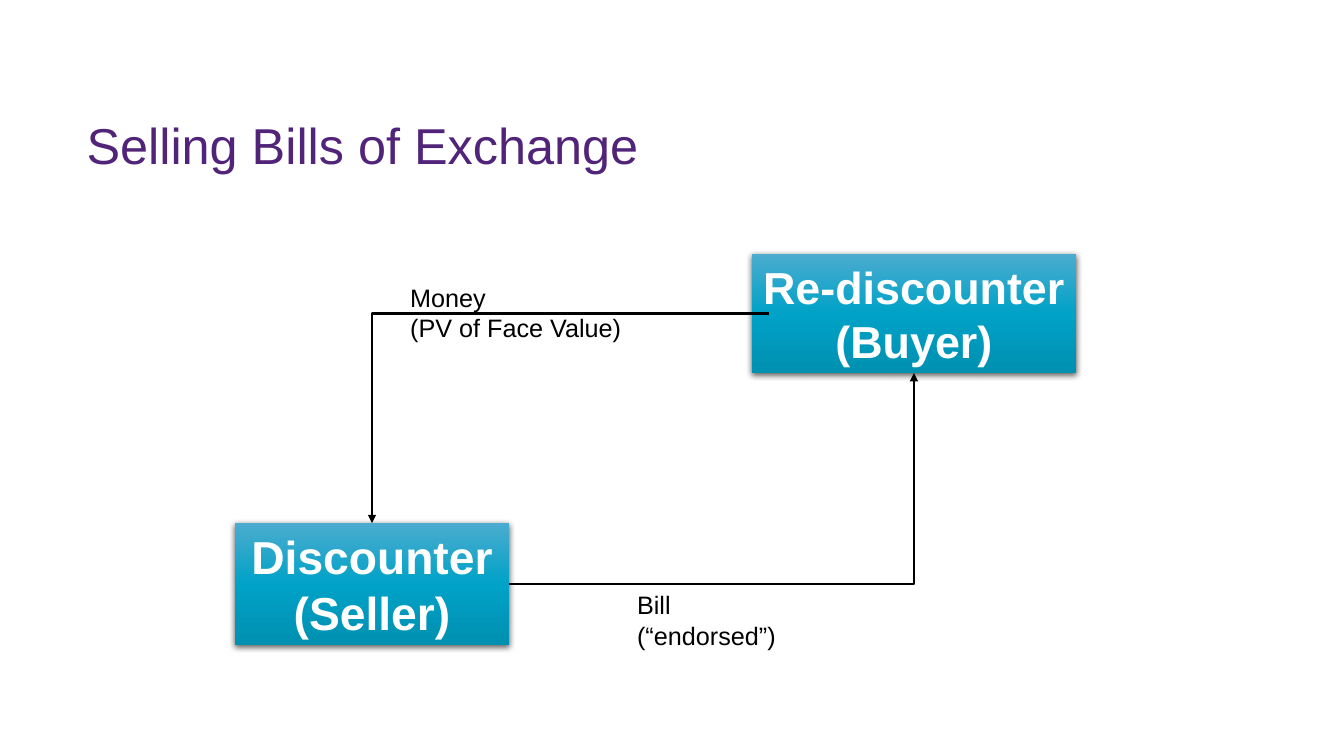
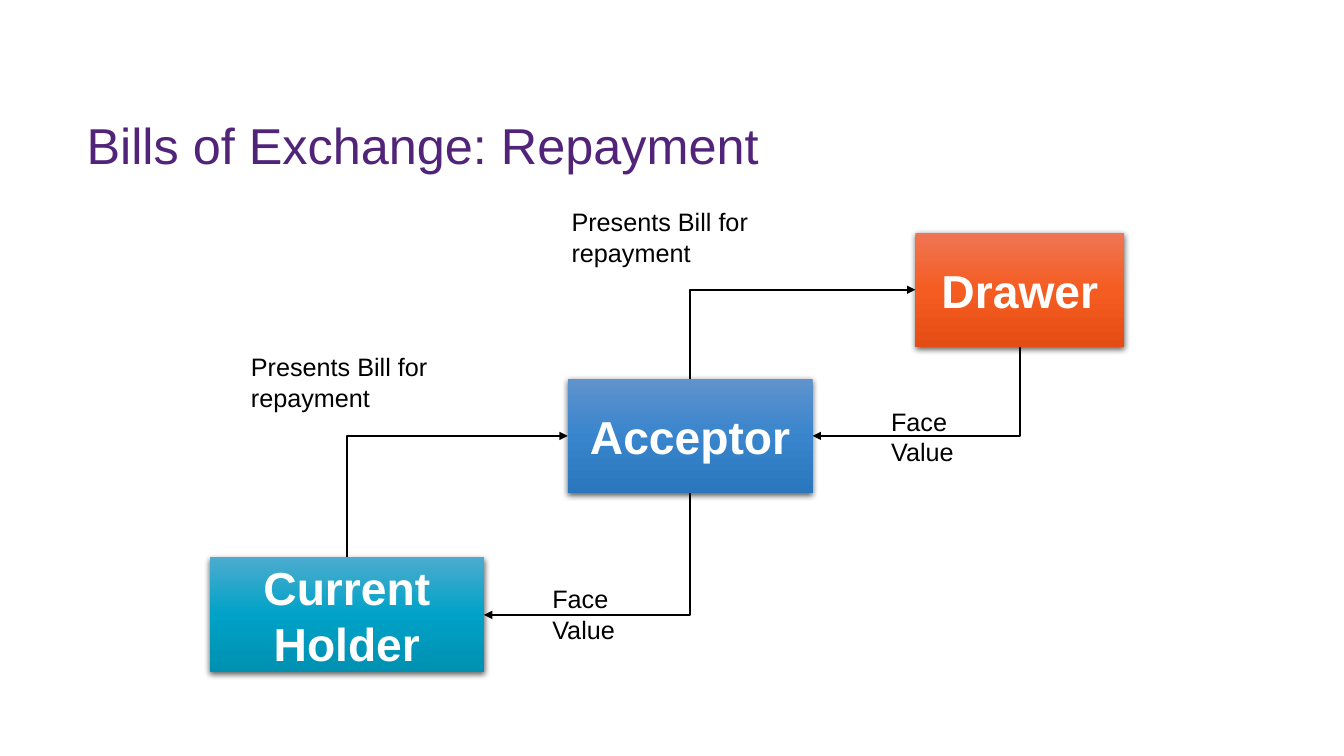
import pptx
import pptx.util
import pptx.dml.color
import pptx.enum.shapes
import pptx.enum.text
import pptx.oxml
import pptx.oxml.ns
import lxml.etree

Inches = pptx.util.Inches
Pt = pptx.util.Pt
qn = pptx.oxml.ns.qn
RGB = pptx.dml.color.RGBColor.from_string
ALIGN = pptx.enum.text.PP_ALIGN

COLORS = {"title": "51247A", "text": "000000", "box_text": "FFFFFF"}
GRADIENTS = {
    "teal": ["4BACCF", "00A2C7", "0090B1"],
    "orange": ["EF7554", "F55C21", "E44D13"],
    "blue": ["5F93CD", "3985CD", "2B77BD"],
}
TOP, LEFT, BOTTOM, RIGHT = range(4)

SLIDES = [
    {
        "title": "Selling Bills of Exchange",
        "arrow_end": "a:tailEnd",
        "boxes": {
            "buyer": (7.46, 2.52, 3.21, 1.18, "teal", 32, "Re-discounter\n(Buyer)"),
            "seller": (2.33, 5.19, 2.72, 1.21, "teal", 33, "Discounter\n(Seller)"),
        },
        "flows": [
            ("buyer", LEFT, "seller", TOP, 0.17),
            ("seller", RIGHT, "buyer", BOTTOM, 0),
        ],
        "labels": [
            (3.97, 2.75, 2.31, "Money\n(PV of Face Value)"),
            (6.22, 5.8, 1.79, "Bill\n(“endorsed”)"),
        ],
    },
    {
        "title": "Bills of Exchange: Repayment",
        "arrow_end": "a:headEnd",
        "boxes": {
            "drawer": (9.08, 2.31, 2.07, 1.13, "orange", 33, "Drawer"),
            "acceptor": (5.63, 3.76, 2.43, 1.13, "blue", 33, "Acceptor"),
            "holder": (2.08, 5.53, 2.72, 1.14, "teal", 33, "Current\nHolder"),
        },
        "flows": [
            ("holder", RIGHT, "acceptor", BOTTOM, 0),
            ("acceptor", LEFT, "holder", TOP, 0),
            ("drawer", LEFT, "acceptor", TOP, 0),
            ("acceptor", RIGHT, "drawer", BOTTOM, 0),
        ],
        "labels": [
            (5.38, 5.74, 0.83, "Face\nValue"),
            (2.39, 3.44, 2.68, "Presents Bill for\nrepayment"),
            (5.57, 2, 2.68, "Presents Bill for\nrepayment"),
            (8.74, 3.98, 0.83, "Face\nValue"),
        ],
    },
]


def write(sp, text, size, color, bold=False, align=ALIGN.LEFT, spacing=1.0):
    tf = sp.text_frame
    tf.word_wrap = True
    for i, line in enumerate(text.split("\n")):
        p = tf.add_paragraph() if i else tf.paragraphs[0]
        p.alignment = align
        p.line_spacing = spacing
        r = p.add_run()
        r.text = line
        r.font.name = "Arial"
        r.font.size = Pt(size)
        r.font.bold = bold
        r.font.color.rgb = RGB(COLORS[color])


def site_point(sp, site):
    if site in (LEFT, RIGHT):
        x = sp.left + (sp.width if site == RIGHT else 0)
        return x, sp.top + sp.height // 2
    y = sp.top + (sp.height if site == BOTTOM else 0)
    return sp.left + sp.width // 2, y


prs = pptx.Presentation()
prs.slide_width = Inches(13.33)
prs.slide_height = Inches(7.5)

for page in SLIDES:
    s = prs.slides.add_slide(prs.slide_layouts[6])
    title = s.shapes.add_textbox(Inches(0.76), Inches(1.15), Inches(11.81), Inches(0.64))
    write(title, page["title"], 36, "title", spacing=0.9)

    boxes = {}
    for name, (x, y, w, h, shade, size, text) in page["boxes"].items():
        sp = s.shapes.add_shape(
            pptx.enum.shapes.MSO_SHAPE.FLOWCHART_PROCESS,
            Inches(x), Inches(y), Inches(w), Inches(h))
        boxes[name] = sp
        sp.line.fill.background()
        sp.shadow.inherit = False
        stops = "".join(
            f'<a:gs pos="{i * 50000}"><a:srgbClr val="{c}"/></a:gs>'
            for i, c in enumerate(GRADIENTS[shade]))
        spPr = sp._element.spPr
        spPr.find(qn("a:prstGeom")).addnext(pptx.oxml.parse_xml(
            f'<a:gradFill {pptx.oxml.ns.nsdecls("a")} rotWithShape="1">'
            f'<a:gsLst>{stops}</a:gsLst><a:lin ang="5400000" scaled="0"/></a:gradFill>'))
        spPr.find(qn("a:effectLst")).append(pptx.oxml.parse_xml(
            f'<a:outerShdw {pptx.oxml.ns.nsdecls("a")} blurRad="57150" dist="19050" '
            'dir="5400000" algn="ctr" rotWithShape="0"><a:srgbClr val="000000">'
            '<a:alpha val="63000"/></a:srgbClr></a:outerShdw>'))
        tf = sp.text_frame
        tf.vertical_anchor = pptx.enum.text.MSO_ANCHOR.MIDDLE
        write(sp, text, size, "box_text", bold=True, align=ALIGN.CENTER)

    for side_box, side, end_box, end, overlap in page["flows"]:
        x1, y1 = site_point(boxes[side_box], side)
        x2, y2 = site_point(boxes[end_box], end)
        sp = s.shapes.add_connector(
            pptx.enum.shapes.MSO_CONNECTOR.ELBOW, x1 + Inches(overlap), y1, x2, y2)
        if not overlap:
            sp.begin_connect(boxes[side_box], side)
        sp.end_connect(boxes[end_box], end)
        sp.line.width = Pt(1.5)
        sp.line.color.rgb = RGB(COLORS["text"])
        spPr = sp._element.spPr
        spPr.find(qn("a:prstGeom")).set("prst", "bentConnector2")
        arrow = lxml.etree.SubElement(spPr.find(qn("a:ln")), qn(page["arrow_end"]))
        arrow.set("type", "triangle")
        lxml.etree.SubElement(spPr, qn("a:effectLst"))

    for x, y, w, text in page["labels"]:
        label = s.shapes.add_textbox(Inches(x), Inches(y), Inches(w), Inches(0.71))
        write(label, text, 18, "text")

prs.save("out.pptx")
